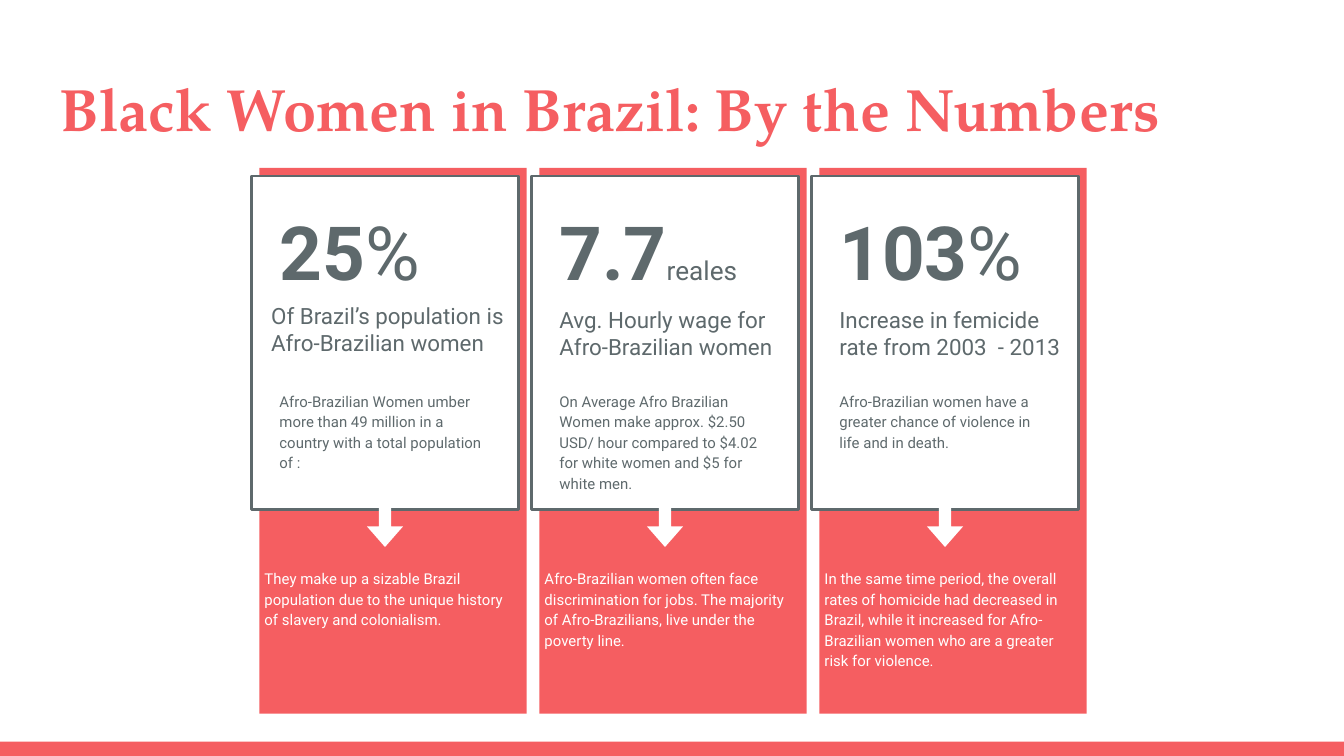
import pptx
import pptx.util
import pptx.dml.color
import pptx.enum.shapes
import pptx.enum.text
from dataclasses import dataclass

Pt = pptx.util.Pt
SHAPE = pptx.enum.shapes.MSO_SHAPE
ANCHOR = pptx.enum.text.MSO_ANCHOR


@dataclass(frozen=True)
class Theme:
    coral: str = "F55E61"
    slate: str = "5E696C"
    white: str = "FFFFFF"
    title_font: str = "TeX Gyre Pagella"
    body_font: str = "Roboto"
    title_size: int = 32
    number_size: int = 40
    unit_size: int = 14
    label_size: int = 12
    note_size: int = 8


theme = Theme()


def add_block(shapes, kind, left, top, width, height, fill, line=None):
    block = shapes.add_shape(kind, Pt(left), Pt(top), Pt(width), Pt(height))
    block.shadow.inherit = False
    block.fill.solid()
    block.fill.fore_color.rgb = pptx.dml.color.RGBColor.from_string(fill)
    if line:
        block.line.color.rgb = pptx.dml.color.RGBColor.from_string(line)
        block.line.width = Pt(1.5)
    else:
        block.line.fill.background()
    return block


def write_text(box, spans, color, font=theme.body_font, spacing=1.0):
    frame = box.text_frame
    frame.word_wrap = True
    frame.auto_size = pptx.enum.text.MSO_AUTO_SIZE.NONE
    frame.vertical_anchor = ANCHOR.TOP
    frame.margin_left = frame.margin_right = Pt(7.2)
    frame.margin_top = frame.margin_bottom = Pt(7.2)
    para = frame.paragraphs[0]
    para.alignment = pptx.enum.text.PP_ALIGN.LEFT
    para.line_spacing = spacing
    for text, size, bold in spans:
        span = para.add_run()
        span.text = text
        span.font.name = font
        span.font.size = Pt(size)
        span.font.bold = bold
        span.font.color.rgb = pptx.dml.color.RGBColor.from_string(color)


deck = pptx.Presentation()
deck.slide_width = Pt(720)
deck.slide_height = Pt(405)
page = deck.slides.add_slide(deck.slide_layouts[5])

add_block(page.shapes, SHAPE.RECTANGLE, 0, 397.4, 720, 7.6, theme.coral)

title = page.shapes.title
title.left, title.top, title.width, title.height = Pt(24.5), Pt(31), Pt(671), Pt(49)
write_text(title, [("Black Women in Brazil: By the Numbers", theme.title_size, True)],
           theme.coral, theme.title_font)

columns = [
    ("25", "%", theme.number_size,
     "Of Brazil’s population is Afro-Brazilian women", (3.6, 154.8, 151.2),
     "Afro-Brazilian Women umber more than 49 million in a country with a total population of :",
     "They make up a sizable Brazil population due to the unique history of slavery and colonialism."),
    ("7.7", "reales", theme.unit_size,
     "Avg. Hourly wage for Afro-Brazilian women", (8, 157, 143.3),
     "On Average Afro Brazilian Women make approx. $2.50 USD/ hour compared to $4.02 "
     "for white women and $5 for white men.",
     "Afro-Brazilian women often face discrimination for jobs. The majority of "
     "Afro-Brazilians, live under the poverty line."),
    ("103", "%", theme.number_size,
     "Increase in femicide rate from 2003  - 2013", (8, 157, 143.3),
     "Afro-Brazilian women have a greater chance of violence in life and in death.",
     "In the same time period, the overall rates of homicide had decreased in Brazil, "
     "while it increased for Afro-Brazilian women who are a greater risk for violence."),
]
first_left, pitch, card_width = 134.6, 150, 143.3

for index, (number, unit, unit_size, label, label_place, detail, context) in enumerate(columns):
    left = first_left + index * pitch
    shapes = page.shapes.add_group_shape().shapes
    add_block(shapes, SHAPE.RECTANGLE, left + 4.3, 90, card_width, 292.3, theme.coral)
    add_block(shapes, SHAPE.RECTANGLE, left, 94.3, card_width, 178.6, theme.white, theme.slate)
    arrow = add_block(shapes, SHAPE.RIGHT_ARROW, left + 57.6, 269.3, 28.1, 19.4, theme.white)
    arrow.rotation = 90
    arrow.adjustments[0] = 0.34
    arrow.adjustments[1] = 0.57

    label_shift, label_top, label_width = label_place
    texts = [
        (label_shift, label_top, label_width, 44,
         [(label, theme.label_size, False)], theme.slate, 1.0),
        (8, 201.6, 128.2, 59.8, [(detail, theme.note_size, False)], theme.slate, 1.15),
        (8, 103, 128.2, 48.2,
         [(number, theme.number_size, True), (unit, unit_size, False)], theme.slate, 1.0),
        (0, 296.6, card_width, 77.8, [(context, theme.note_size, False)], theme.white, 1.15),
    ]
    for shift, top, width, height, spans, color, spacing in texts:
        box = shapes.add_textbox(Pt(left + shift), Pt(top), Pt(width), Pt(height))
        write_text(box, spans, color, spacing=spacing)

deck.save("out.pptx")
